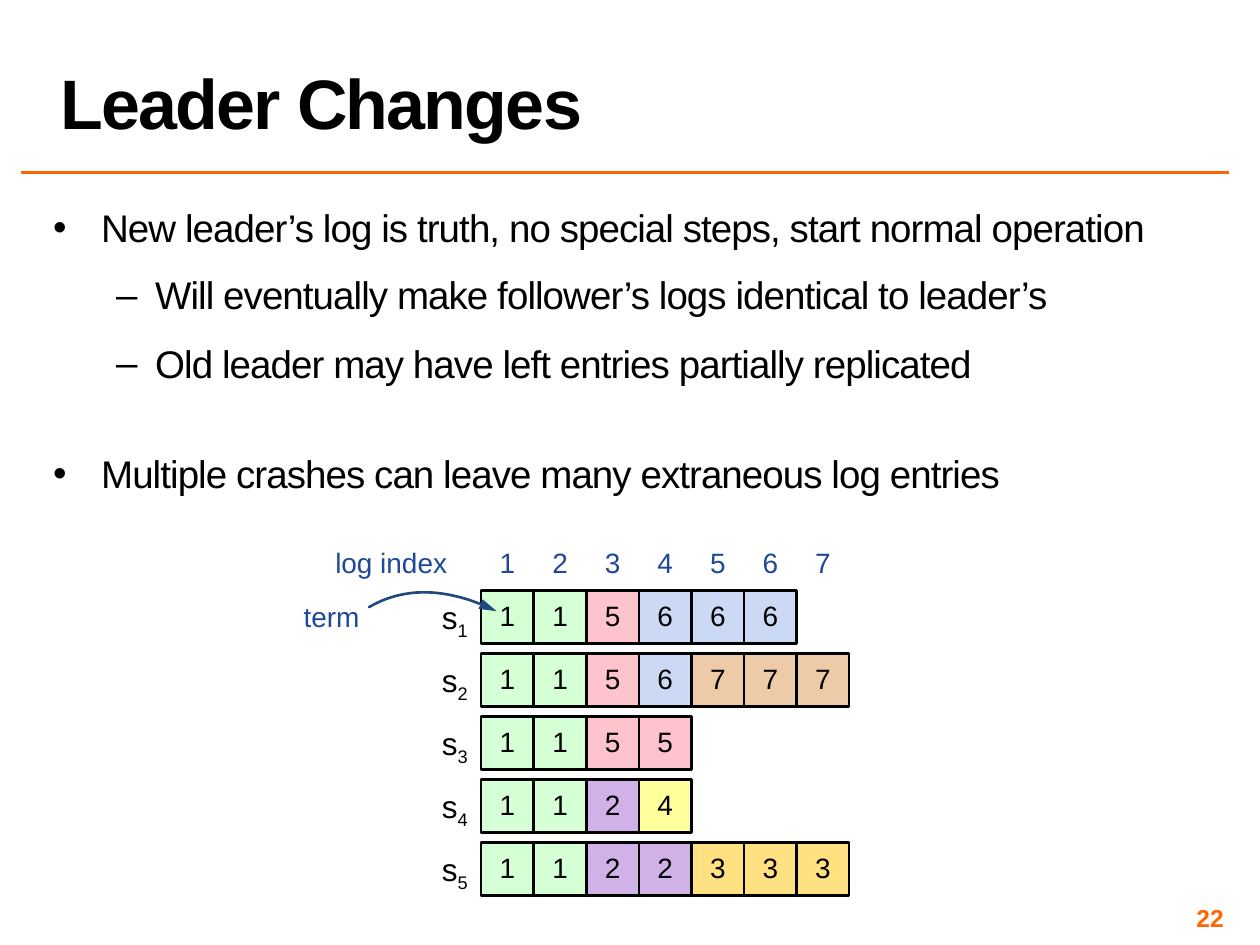
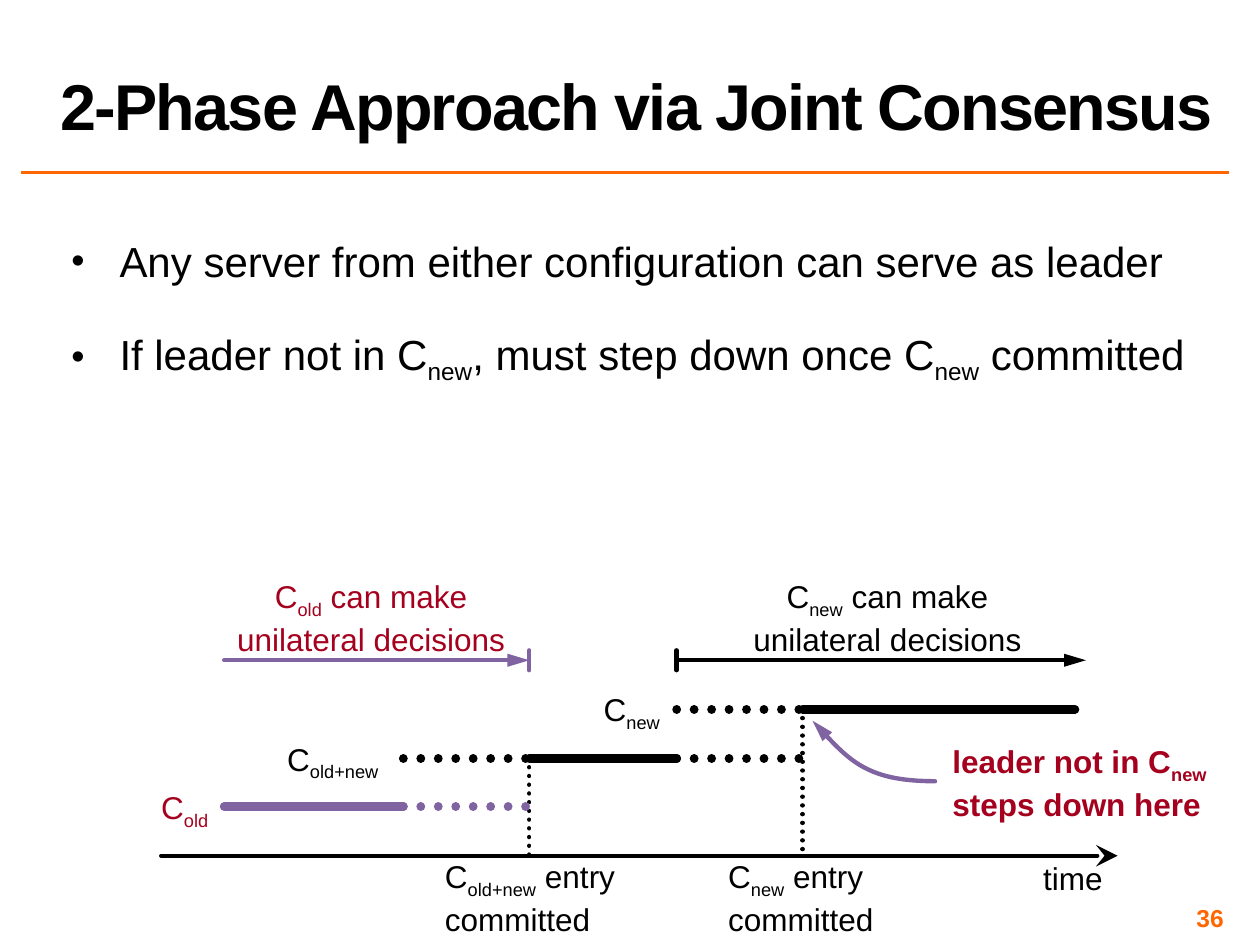
from pptx import Presentation
from pptx.dml.color import RGBColor
from pptx.enum.dml import MSO_LINE
from pptx.enum.shapes import MSO_CONNECTOR, MSO_SHAPE
from pptx.enum.text import MSO_ANCHOR as Anchor, PP_ALIGN as Align
from pptx.oxml.ns import qn
from pptx.util import Cm, Pt
from lxml.etree import SubElement

# Shared style
FONT = "Arial"
BLACK, ORANGE, BLUE, NAVY = "000000", "FF6600", "1F4899", "1F497D"
RED, PURPLE = "A5001E", "8064A2"
DOT = MSO_LINE.ROUND_DOT

# Slide 1: bullets as (text, level, format), then the logs of the servers
LEADER_BULLETS = [
    ("New leader’s log is truth, no special steps, start normal operation", 0, {"space_before": Pt(6)}),
    ("Will eventually make follower’s logs identical to leader’s", 1, {}),
    ("Old leader may have left entries partially replicated", 1, {}),
    ("Multiple crashes can leave many extraneous log entries", 0, {"space_before": Pt(30)}),
]
LEVELS = [  # bullet sign, text indent, hanging indent, paragraph format
    ("•", 0.97, 0.97, {"space_after": Pt(6)}),
    ("–", 2.06, 0.79, {"space_before": Pt(8), "space_after": Pt(6), "line_spacing": 0.95}),
]
SERVER_LOGS = [
    [1, 1, 5, 6, 6, 6],
    [1, 1, 5, 6, 7, 7, 7],
    [1, 1, 5, 5],
    [1, 1, 2, 4],
    [1, 1, 2, 2, 3, 3, 3],
]
TERM_FILLS = {1: "D5FFD5", 2: "D1B2E8", 3: "FFE181", 4: "FFFF9B",
              5: "FFC3CE", 6: "CCD9F4", 7: "EECBA8"}
CELL, ROW_PITCH, LOG_LEFT, LOG_TOP = 1.06, 1.27, 9.7, 11.91

# Slide 2: braces mark subscripts
CONSENSUS_BULLETS = [
    ("Any server from either configuration can serve as leader", 12),
    ("If leader not in C{new}, must step down once C{new} committed", 24),
]
START, JOINT_LOGGED, JOINT_DONE, NEW_LOGGED, NEW_DONE, END = 4.52, 8.13, 10.67, 13.64, 16.18, 21.67
OLD_Y, JOINT_Y, NEW_Y, AXIS_Y, SCOPE_Y = 16.26, 15.29, 14.3, 17.25, 13.31
PHASES = [  # from, to, height, colour, dash
    (START, JOINT_LOGGED, OLD_Y, PURPLE, None),
    (JOINT_LOGGED, JOINT_DONE, OLD_Y, PURPLE, DOT),
    (JOINT_LOGGED, JOINT_DONE, JOINT_Y, BLACK, DOT),
    (JOINT_DONE, NEW_LOGGED, JOINT_Y, BLACK, None),
    (NEW_LOGGED, NEW_DONE, JOINT_Y, BLACK, DOT),
    (NEW_LOGGED, NEW_DONE, NEW_Y, BLACK, DOT),
    (NEW_DONE, END, NEW_Y, BLACK, None),
]
SCOPES = [  # arrow from, arrow to, tick, colour
    (START, JOINT_DONE, JOINT_DONE, PURPLE),
    (NEW_LOGGED, 21.89, NEW_LOGGED, BLACK),
]
TIMELINE_LABELS = [  # lines, left, top, width, format
    (["time"], 21.03, 17.32, 1.22, {}),
    (["C{old+new} entry", "committed"], 8.97, 17.27, 3.66, {}),
    (["C{new} entry", "committed"], 14.68, 17.27, 2.95, {}),
    (["C{old}"], 3.25, 15.88, 1.02, {"color": RED}),
    (["C{old+new}"], 5.79, 14.91, 2.06, {}),
    (["C{new}"], 12.17, 13.92, 1.24, {}),
    (["C{old} can make", "unilateral decisions"], 4.75, 11.63, 5.46,
     {"color": RED, "align": Align.CENTER}),
    (["C{new} can make", "unilateral decisions"], 15.16, 11.63, 5.46, {"align": Align.CENTER}),
    (["leader not in C{new}", "steps down here"], 19.2, 14.96, 5.28, {"color": RED, "bold": True}),
]


def rgb(value):
    return RGBColor.from_string(value)


def apply(target, values):
    for name, value in values.items():
        setattr(target, name, value)


def write(para, text, size, color=BLACK, bold=False, spacing=0):
    """Add text to a paragraph; parts in braces become subscripts."""
    for index, part in enumerate(text.replace("}", "{").split("{")):
        if not part:
            continue
        span = para.add_run()
        span.text = part
        apply(span.font, {"name": FONT, "size": Pt(size), "bold": bold})
        span.font.color.rgb = rgb(color)
        props = span.font._element
        if spacing:
            props.set("spc", str(int(spacing * 100)))
        if index % 2:
            props.set("baseline", "-25000")


def set_frame(box, inset=(0, 0), anchor=Anchor.TOP, wrap=True):
    across, down = (Cm(value) for value in inset)
    apply(box.text_frame, {"margin_left": across, "margin_right": across, "margin_top": down,
                           "margin_bottom": down, "vertical_anchor": anchor, "word_wrap": wrap})
    return box.text_frame


def paragraphs(frame, count):
    return [frame.paragraphs[0]] + [frame.add_paragraph() for _ in range(count - 1)]


def add_text(page, lines, left, top, width, height, size=18, align=Align.LEFT, inset=(0, 0),
             anchor=Anchor.TOP, wrap=True, line_spacing=None, **style):
    box = page.shapes.add_textbox(Cm(left), Cm(top), Cm(width), Cm(height))
    frame = set_frame(box, inset, anchor, wrap)
    for para, line in zip(paragraphs(frame, len(lines)), lines):
        apply(para, {"alignment": align, "line_spacing": line_spacing})
        write(para, line, size, **style)


def add_bullet(para, sign, indent, hanging, percent=100):
    props = para._p.get_or_add_pPr()
    props.set("marL", str(Cm(indent)))
    props.set("indent", str(-Cm(hanging)))
    SubElement(props, qn("a:buSzPct")).set("val", str(percent * 1000))
    SubElement(props, qn("a:buFont")).set("typeface", FONT)
    SubElement(props, qn("a:buChar")).set("char", sign)


def style_line(line, color, width, dash=None, head=None, head_width="med", cap="rnd"):
    line.color.rgb = rgb(color)
    line.width = Pt(width)
    if dash:
        line.dash_style = dash
    props = line._get_or_add_ln()
    props.set("cap", cap)
    if head:
        end = SubElement(props, qn("a:tailEnd"))
        for name, value in {"type": head, "w": head_width, "len": "lg"}.items():
            end.set(name, value)


def add_line(page, x1, y1, x2, y2, color, width, **style):
    connector = page.shapes.add_connector(MSO_CONNECTOR.STRAIGHT, Cm(x1), Cm(y1), Cm(x2), Cm(y2))
    SubElement(connector._element.spPr, qn("a:effectLst"))
    # The line properties must precede the effect list, python-pptx sees to that
    style_line(connector.line, color, width, **style)


def add_curved_arrow(page, points, color, width, steps=24):
    """Draw a cubic curve through its start, two control points and end."""
    def at(t):
        weights = ((1 - t) ** 3, 3 * t * (1 - t) ** 2, 3 * t * t * (1 - t), t ** 3)
        return tuple(Cm(sum(w * point[axis] for w, point in zip(weights, points))) for axis in (0, 1))

    places = [at(step / steps) for step in range(steps + 1)]
    builder = page.shapes.build_freeform(*places[0])
    builder.add_line_segments(places[1:], close=False)
    curve = builder.convert_to_shape()
    curve.shadow.inherit = False
    curve.fill.background()
    style_line(curve.line, color, width, head="triangle")


def add_page(deck, title, number, title_size):
    page = deck.slides.add_slide(deck.slide_layouts[6])
    add_line(page, 0.43, 3.48, 24.77, 3.48, ORANGE, 2, cap="flat")
    add_text(page, [title], 0.97, 0.05, 24.43, 2.97, title_size, inset=(0.25, 0.13),
             anchor=Anchor.BOTTOM, line_spacing=0.8, bold=True, spacing=-1)
    add_text(page, [str(number)], 18.85, 18.21, 5.92, 0.58, 14, Align.RIGHT, inset=(0.1, 0.1),
             anchor=Anchor.MIDDLE, color=ORANGE, bold=True)
    return page


def add_cell(page, term, left, top):
    cell = page.shapes.add_shape(MSO_SHAPE.RECTANGLE, Cm(left), Cm(top), Cm(CELL), Cm(CELL))
    cell.shadow.inherit = False
    cell.fill.solid()
    cell.fill.fore_color.rgb = rgb(TERM_FILLS[term])
    style_line(cell.line, BLACK, 1.5, cap="flat")
    para = set_frame(cell, anchor=Anchor.MIDDLE).paragraphs[0]
    apply(para, {"alignment": Align.CENTER, "line_spacing": Pt(17)})
    write(para, str(term), 16)


def build_leader_changes(deck):
    page = add_page(deck, "Leader Changes", 22, 40)
    body = page.shapes.add_textbox(Cm(0.97), Cm(4.01), Cm(24.36), Cm(6.5))
    frame = set_frame(body, (0.1, 0.1))
    for para, (text, level, extra) in zip(paragraphs(frame, len(LEADER_BULLETS)), LEADER_BULLETS):
        sign, indent, hanging, values = LEVELS[level]
        apply(para, {**values, **extra})
        add_bullet(para, sign, indent, hanging)
        write(para, text, 22, spacing=-0.5)

    # Log table with its headings
    blue = {"size": 16, "color": BLUE}
    add_text(page, ["log index"], 6.76, 11, 3.18, 0.69, **blue)
    add_text(page, ["term"], 6.12, 12.09, 2.11, 0.69, **blue)
    for column in range(max(map(len, SERVER_LOGS))):
        add_text(page, [str(column + 1)], LOG_LEFT + column * CELL, 10.87, CELL, 0.94,
                 align=Align.CENTER, inset=(0.25, 0.13), **blue)
    for row, log in enumerate(SERVER_LOGS):
        top = LOG_TOP + row * ROW_PITCH
        add_text(page, [f"s{{{row + 1}}}"], LOG_LEFT - CELL, top + 0.15, CELL, 0.76,
                 align=Align.CENTER)
        for column, term in enumerate(log):
            add_cell(page, term, LOG_LEFT + column * CELL, top)
    add_curved_arrow(page, [(7.44, 12.24), (8.26, 11.76), (9.17, 11.91), (10.01, 12.32)], NAVY, 1.5)


def build_joint_consensus(deck):
    page = add_page(deck, "2-Phase Approach via Joint Consensus", 36, 37)
    body = page.shapes.add_textbox(Cm(1.19), Cm(4.62), Cm(24.21), Cm(6.38))
    frame = set_frame(body, (0.25, 0.13))
    for para, (text, before) in zip(paragraphs(frame, len(CONSENSUS_BULLETS)), CONSENSUS_BULLETS):
        para.space_before = Pt(before)
        add_bullet(para, "•", 0.97, 0.97, 90)
        write(para, text, 24)

    # Time axis and commit points
    add_line(page, 3.25, AXIS_Y, 22.53, AXIS_Y, BLACK, 2.5, head="stealth", head_width="lg")
    for x, top in ((JOINT_DONE, JOINT_Y), (NEW_DONE, NEW_Y)):
        add_line(page, x, top, x, AXIS_Y, BLACK, 2.5, dash=DOT)

    # Configuration phases and the scopes of unilateral decisions
    for left, right, y, color, dash in PHASES:
        add_line(page, left, y, right, y, color, 5, dash=dash)
    for left, right, tick, color in SCOPES:
        add_line(page, left, SCOPE_Y, right, SCOPE_Y, color, 2.5, head="triangle")
        add_line(page, tick, SCOPE_Y - 0.2, tick, SCOPE_Y + 0.2, color, 2.5)

    for lines, left, top, width, style in TIMELINE_LABELS:
        add_text(page, lines, left, top, width, 0.77 * len(lines), wrap=False, **style)
    add_curved_arrow(page, [(18.85, 15.75), (17.4, 15.75), (17.09, 15.29), (16.38, 14.53)], PURPLE, 2.5)


def main():
    deck = Presentation()
    deck.slide_width, deck.slide_height = Cm(25.4), Cm(19.05)
    build_leader_changes(deck)
    build_joint_consensus(deck)
    deck.save("out.pptx")


if __name__ == "__main__":
    main()
